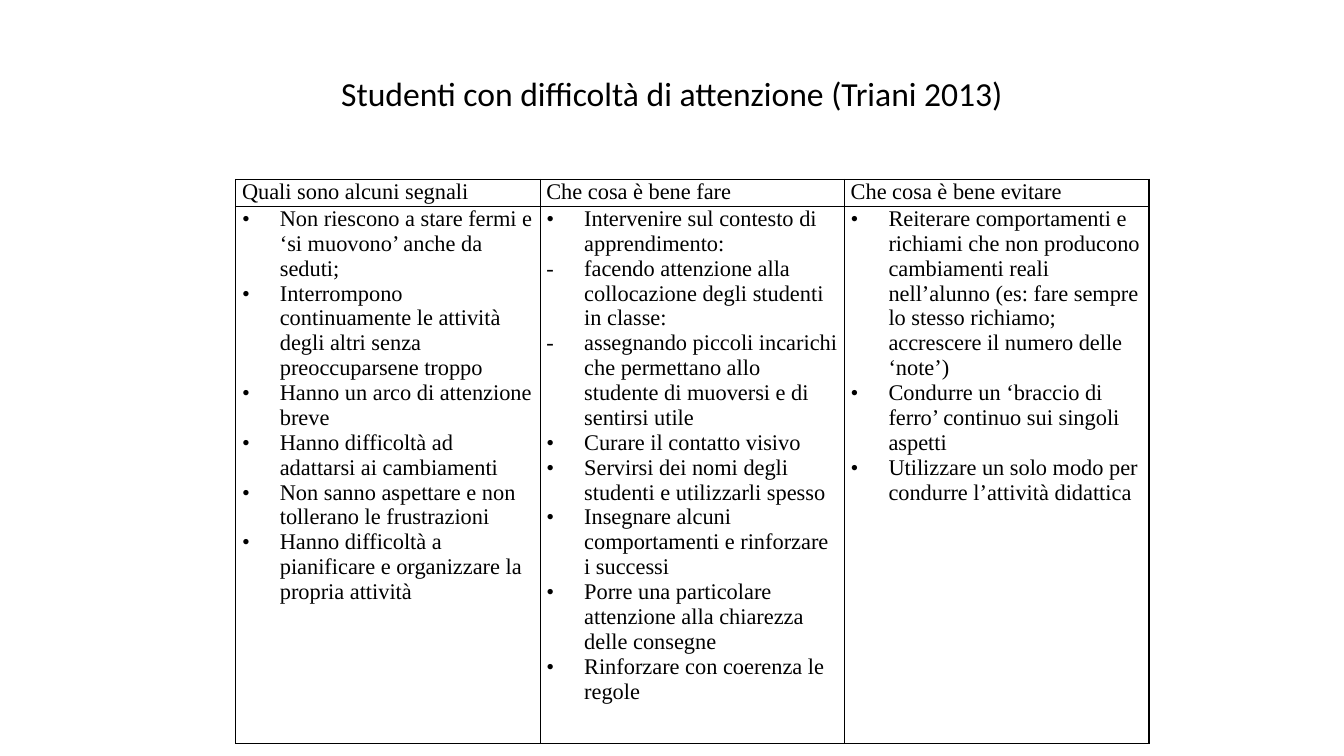
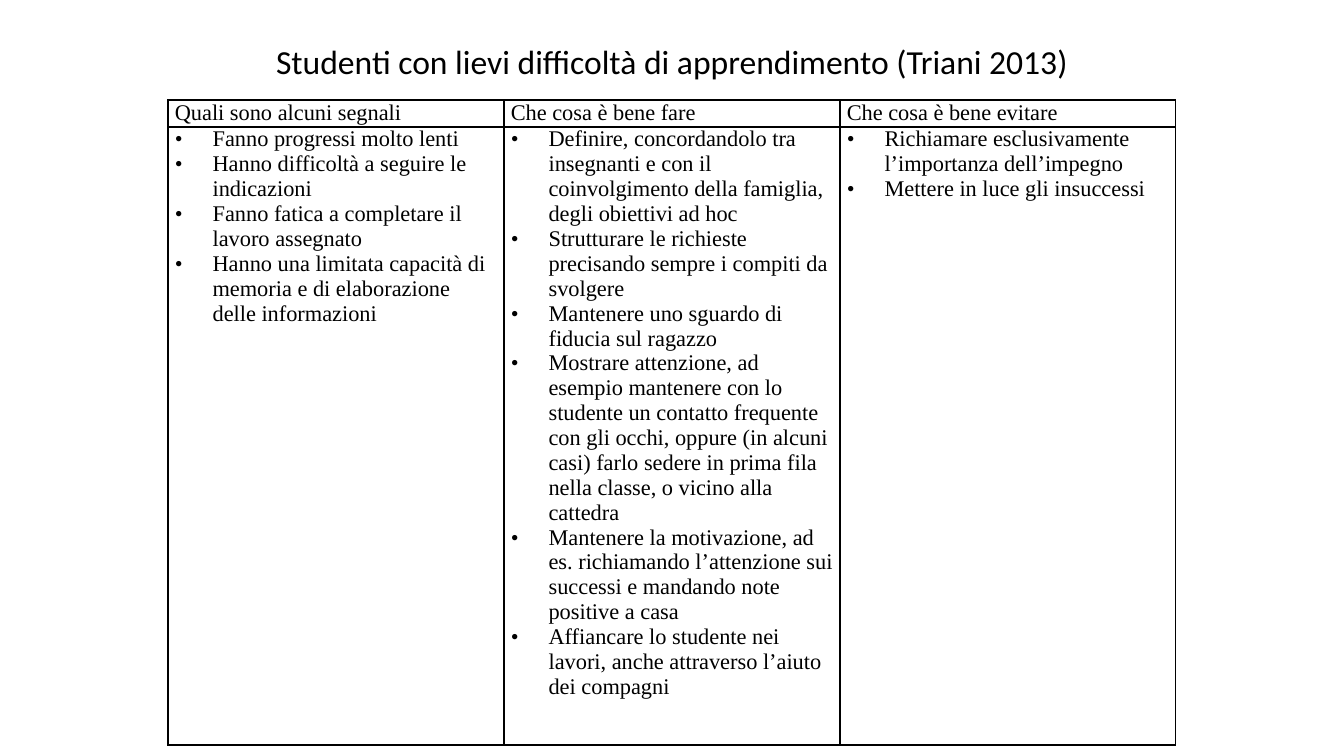
"""Build two slides, each a title over a three-column table of advice."""
import pptx
import pptx.dml.color
import pptx.enum.text
import pptx.oxml
import pptx.oxml.ns
import pptx.util

Pt = pptx.util.Pt
COLORS = {"text": "000000", "border": "000000"}
TITLE_FONT, TABLE_FONT = "Calibri", "Times New Roman"
HEADERS = ["Quali sono alcuni segnali", "Che cosa è bene fare", "Che cosa è bene evitare"]
HEADER_HEIGHT = 17.5
INDENT, TAB = 27, 36
DASH = "- "

SLIDES = [
    {
        "title": "Studenti con difficoltà di attenzione (Triani 2013)",
        "title_box": (48, 21.6, 864, 90),
        "table_at": (168.5, 128.2),
        "col_width": 217.4,
        "body_height": 380.9,
        "inset": 4.4,
        "columns": [
            [
                "Non riescono a stare fermi e ‘si muovono’ anche da seduti;",
                "Interrompono continuamente le attività degli altri senza preoccuparsene troppo",
                "Hanno un arco di attenzione breve",
                "Hanno difficoltà ad adattarsi ai cambiamenti",
                "Non sanno aspettare e non tollerano le frustrazioni",
                "Hanno difficoltà a pianificare e organizzare la propria attività",
            ],
            [
                "Intervenire sul contesto di apprendimento:",
                "- facendo attenzione alla collocazione degli studenti in classe:",
                "- assegnando piccoli incarichi che permettano allo studente di muoversi e di sentirsi utile",
                "Curare il contatto visivo",
                "Servirsi dei nomi degli studenti e utilizzarli spesso",
                "Insegnare alcuni comportamenti e rinforzare i successi",
                "Porre una particolare attenzione alla chiarezza delle consegne",
                "Rinforzare con coerenza le regole",
            ],
            [
                "Reiterare comportamenti e richiami che non producono cambiamenti reali nell’alunno "
                "(es: fare sempre lo stesso richiamo; accrescere il numero delle ‘note’)",
                "Condurre un ‘braccio di ferro’ continuo sui singoli aspetti",
                "Utilizzare un solo modo per condurre l’attività didattica",
            ],
        ],
    },
    {
        "title": "Studenti con lievi difficoltà di apprendimento (Triani 2013)",
        "title_box": (156, 21.6, 648, 44),
        "table_at": (120, 71.5),
        "col_width": 240,
        "body_height": 437,
        "inset": 4.9,
        "columns": [
            [
                "Fanno progressi molto lenti",
                "Hanno difficoltà a seguire le indicazioni",
                "Fanno fatica a completare il lavoro assegnato",
                "Hanno una limitata capacità di memoria e di elaborazione delle informazioni",
            ],
            [
                "Definire, concordandolo tra insegnanti e con il coinvolgimento della famiglia, "
                "degli obiettivi ad hoc",
                "Strutturare le richieste precisando sempre i compiti da svolgere",
                "Mantenere uno sguardo di fiducia sul ragazzo",
                "Mostrare attenzione, ad esempio mantenere con lo studente un contatto frequente "
                "con gli occhi, oppure (in alcuni casi) farlo sedere in prima fila nella classe, "
                "o vicino alla cattedra",
                "Mantenere la motivazione, ad es. richiamando l’attenzione sui successi "
                "e mandando note positive a casa",
                "Affiancare lo studente nei lavori, anche attraverso l’aiuto dei compagni",
            ],
            [
                "Richiamare esclusivamente l’importanza dell’impegno",
                "Mettere in luce gli insuccessi",
            ],
        ],
    },
]


def xml(markup):
    """Parse one DrawingML element written with the a: prefix."""
    head, gap, tail = markup.partition(" ")
    return pptx.oxml.parse_xml(f"{head} {pptx.oxml.ns.nsdecls('a')} {tail}")


def add_text(p, text, font=TABLE_FONT, size=16, color="text", align=None, bullet=None):
    """Write text into a paragraph with the given format."""
    r = p.add_run()
    r.text = text
    r.font.name, r.font.size = font, Pt(size)
    r.font.color.rgb = pptx.dml.color.RGBColor.from_string(COLORS[color])
    if align is not None:
        p.alignment = align
    if bullet:
        pPr = p._p.get_or_add_pPr()
        pPr.set("marL", str(Pt(INDENT)))
        pPr.set("indent", str(-Pt(INDENT)))
        pPr.append(xml(f'<a:buFont typeface="{font}"/>'))
        pPr.append(xml(f'<a:buChar char="{bullet}"/>'))
        pPr.append(xml(f'<a:tabLst ><a:tab pos="{Pt(TAB)}" algn="l"/></a:tabLst>'))


def add_title(slide, text, box):
    """Add the centred slide title."""
    tf = slide.shapes.add_textbox(*map(Pt, box)).text_frame
    tf.word_wrap = True
    tf.vertical_anchor = pptx.enum.text.MSO_ANCHOR.MIDDLE
    add_text(tf.paragraphs[0], text, font=TITLE_FONT, size=24,
             align=pptx.enum.text.PP_ALIGN.CENTER)


def style_cell(cell, inset):
    """Give a cell its margins, clear fill and thin border."""
    cell.margin_left = cell.margin_right = Pt(inset)
    cell.margin_top = cell.margin_bottom = 0
    cell.fill.background()
    tcPr = cell._tc.get_or_add_tcPr()
    for i, side in enumerate("LRTB"):
        tcPr.insert(i, xml(
            f'<a:ln{side} w="{Pt(1)}"><a:solidFill><a:srgbClr val="{COLORS["border"]}"/>'
            f'</a:solidFill></a:ln{side}>'))


def add_items(tf, items):
    """List items with a dot, or with a dash where they are sub-items."""
    for i, item in enumerate(items):
        p = tf.add_paragraph() if i else tf.paragraphs[0]
        bullet = "-" if item.startswith(DASH) else "•"
        add_text(p, item.removeprefix(DASH), bullet=bullet)


def add_advice_table(slide, at, col_width, body_height, inset, columns):
    """Add the table with a header row and one row of lists."""
    heights = (HEADER_HEIGHT, body_height)
    size = (col_width * len(HEADERS), sum(heights))
    table = slide.shapes.add_table(len(heights), len(HEADERS), *map(Pt, at + size)).table
    table.first_row = table.horz_banding = False
    for row, height in zip(table.rows, heights):
        row.height = Pt(height)
    for c, (header, items) in enumerate(zip(HEADERS, columns)):
        table.columns[c].width = Pt(col_width)
        add_text(table.cell(0, c).text_frame.paragraphs[0], header)
        add_items(table.cell(1, c).text_frame, items)
    for cell in table.iter_cells():
        style_cell(cell, inset)


def main():
    """Build and save the presentation."""
    prs = pptx.Presentation()
    prs.slide_width, prs.slide_height = Pt(960), Pt(540)
    for content in SLIDES:
        slide = prs.slides.add_slide(prs.slide_layouts[6])
        add_title(slide, content["title"], content["title_box"])
        add_advice_table(slide, content["table_at"], content["col_width"],
                         content["body_height"], content["inset"], content["columns"])
    prs.save("out.pptx")


if __name__ == "__main__":
    main()
